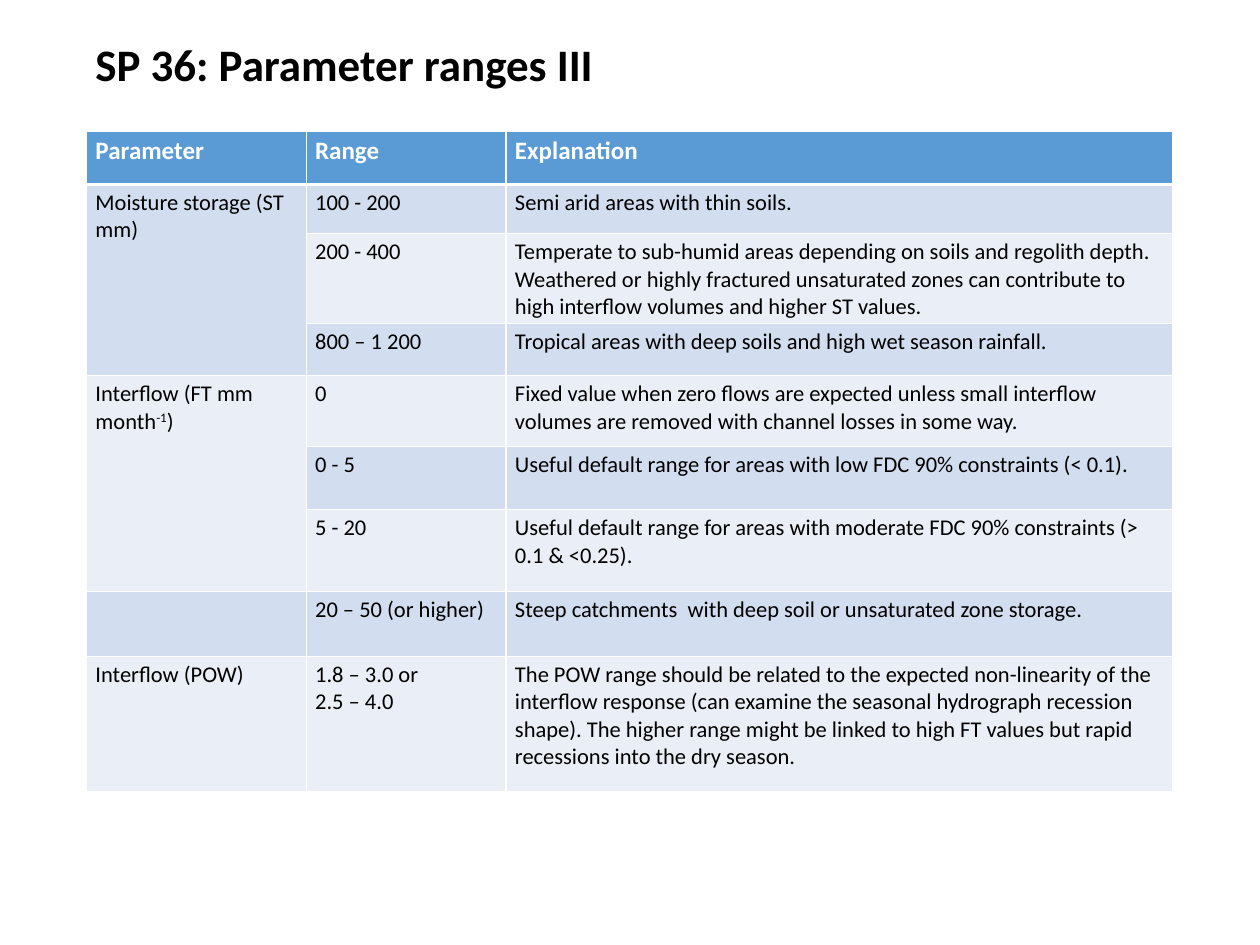
from lxml import etree
from pptx import Presentation
from pptx.dml.color import RGBColor
from pptx.enum.text import MSO_ANCHOR
from pptx.oxml.ns import qn
from pptx.util import Cm, Pt

MIDDLE = MSO_ANCHOR.MIDDLE
FONT = "Calibri"
BLACK, WHITE, HEADER_BLUE = "000000", "FFFFFF", "5B9BD5"
BANDS = ("D2DEEF", "EAEFF7")

# Content: "\n" starts a paragraph, "^" encloses a superscript
TITLE = "SP 36: Parameter ranges III"
ROWS = [
    ("Parameter", "Range", "Explanation"),
    ("Moisture storage (ST mm)", "100 - 200", "Semi arid areas with thin soils."),
    ("", "200 - 400",
     "Temperate to sub-humid areas depending on soils and regolith depth. "
     "Weathered or highly fractured unsaturated zones can contribute to "
     "high interflow volumes and higher ST values."),
    ("", "800 – 1 200", "Tropical areas with deep soils and high wet season rainfall."),
    ("Interflow (FT mm month^-1^)", "0",
     "Fixed value when zero flows are expected unless small interflow "
     "volumes are removed with channel losses in some way."),
    ("", "0 - 5", "Useful default range for areas with low FDC 90% constraints (< 0.1)."),
    ("", "5 - 20",
     "Useful default range for areas with moderate FDC 90% constraints (> 0.1 & <0.25)."),
    ("", "20 – 50 (or higher)",
     "Steep catchments  with deep soil or unsaturated zone storage."),
    ("Interflow (POW)", "1.8 – 3.0 or\n2.5 – 4.0",
     "The POW range should be related to the expected non-linearity of the "
     "interflow response (can examine the seasonal hydrograph recession "
     "shape). The higher range might be linked to high FT values but rapid "
     "recessions into the dry season."),
]
PARAMETER_SPANS = [(1, 3), (4, 6)]  # first and last row of each merged cell

# Measures in centimetres
LEFT, WIDTH = 2.44, 30.66
TITLE_TOP, TITLE_HEIGHT = 0.97, 1.83
TABLE_TOP = 3.7
COLUMN_WIDTHS = [6.2, 5.64, 18.82]
ROW_HEIGHTS = [1.5, 1.4, 2.26, 1.47, 1.98, 1.8, 2.31, 1.83, 3.81]


def color(value):
    return RGBColor.from_string(value)


def write(frame, text, size, ink, bold):
    for index, line in enumerate(text.split("\n")):
        para = frame.add_paragraph() if index else frame.paragraphs[0]
        font = para.font
        font.name, font.size, font.bold = FONT, Pt(size), bold
        font.color.rgb = color(ink)
        for part, piece in enumerate(line.split("^")):
            if piece:
                span = para.add_run()
                span.text = piece
                if part % 2:
                    span._r.get_or_add_rPr().set("baseline", "30000")


def set_borders(cell, bottom_width):
    properties = cell._tc.get_or_add_tcPr()
    sides = [("lnL", 1), ("lnR", 1), ("lnT", 1), ("lnB", bottom_width)]
    for position, (side, width) in enumerate(sides):
        line = etree.Element(qn(f"a:{side}"), w=str(Pt(width)))
        fill = etree.SubElement(line, qn("a:solidFill"))
        etree.SubElement(fill, qn("a:srgbClr"), val=WHITE)
        properties.insert(position, line)


deck = Presentation()
deck.slide_width, deck.slide_height = Cm(35.56), Cm(26.67)
page = deck.slides.add_slide(deck.slide_layouts[6])

# Title
box = page.shapes.add_textbox(Cm(LEFT), Cm(TITLE_TOP), Cm(WIDTH), Cm(TITLE_HEIGHT))
box.text_frame.word_wrap = True
box.text_frame.vertical_anchor = MIDDLE
write(box.text_frame, TITLE, 36, BLACK, True)
box.text_frame.paragraphs[0].line_spacing = 0.9

# Table grid
table = page.shapes.add_table(
    len(ROWS), len(COLUMN_WIDTHS),
    Cm(LEFT), Cm(TABLE_TOP), Cm(WIDTH), Cm(sum(ROW_HEIGHTS))).table
for column, width in zip(table.columns, COLUMN_WIDTHS):
    column.width = Cm(width)
for row, height in zip(table.rows, ROW_HEIGHTS):
    row.height = Cm(height)
for first, last in PARAMETER_SPANS:
    table.cell(first, 0).merge(table.cell(last, 0))

# Cells: a header row, then alternating bands
for row_index, texts in enumerate(ROWS):
    header = row_index == 0
    for column_index, text in enumerate(texts):
        cell = table.cell(row_index, column_index)
        cell.fill.solid()
        cell.fill.fore_color.rgb = color(
            HEADER_BLUE if header else BANDS[(row_index - 1) % 2])
        set_borders(cell, 3 if header else 1)
        write(cell.text_frame, text, 20 if header else 18,
              WHITE if header else BLACK, header)

deck.save("out.pptx")
